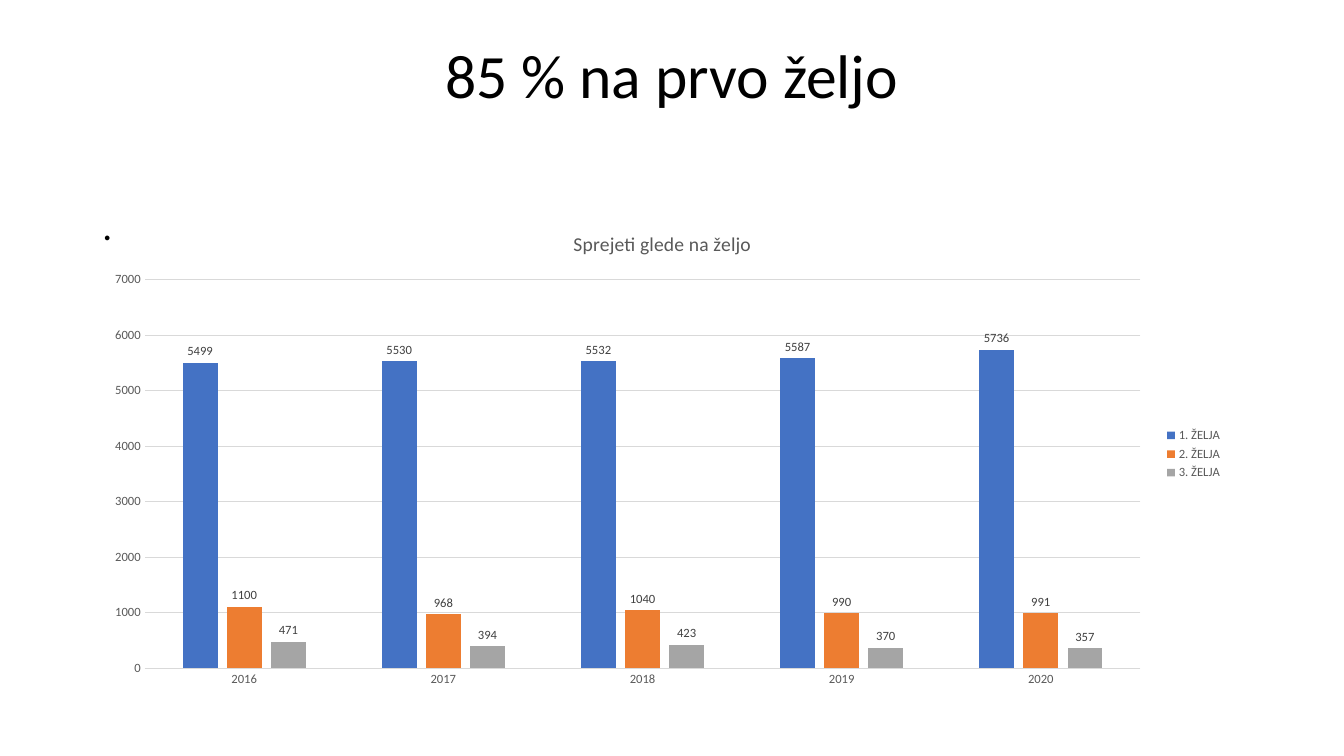
from pptx import Presentation
from pptx.chart.data import CategoryChartData
from pptx.dml.color import RGBColor
from pptx.enum import chart as ch, text
from pptx.util import Pt


def rgb(value):
    return RGBColor.from_string(value)


def style(font, size, color):
    font.name, font.size, font.bold = "Calibri", Pt(size), False
    font.color.rgb = rgb(color)


GREY, RULE = "595959", "D9D9D9"
YEARS = ["2016", "2017", "2018", "2019", "2020"]
CHOICES = [
    ("1. ŽELJA", "4472C4", [5499, 5530, 5532, 5587, 5736]),
    ("2. ŽELJA", "ED7D31", [1100, 968, 1040, 990, 991]),
    ("3. ŽELJA", "A5A5A5", [471, 394, 423, 370, 357]),
]

prs = Presentation()
prs.slide_width, prs.slide_height = Pt(960), Pt(540)
s = prs.slides.add_slide(prs.slide_layouts[5])

# Title and body text
title = s.shapes.title
title.left, title.top, title.width, title.height = Pt(66), Pt(28.75), Pt(828), Pt(104.4)
body = s.shapes.add_textbox(Pt(66), Pt(143.75), Pt(828), Pt(342.6))
for sp, words, size, align in [
    (title, "85 % na prvo željo", 44, text.PP_ALIGN.CENTER),
    (body, ".", 28, text.PP_ALIGN.LEFT),
]:
    tf = sp.text_frame
    tf.word_wrap = True
    tf.auto_size = text.MSO_AUTO_SIZE.NONE
    tf.vertical_anchor = text.MSO_ANCHOR.TOP
    p = tf.paragraphs[0]
    p.alignment, p.line_spacing = align, 0.9
    r = p.add_run()
    r.text = words
    style(r.font, size, "000000")

# Chart
data = CategoryChartData()
data.categories = YEARS
for name, _, values in CHOICES:
    data.add_series(name, values)
chart = s.shapes.add_chart(ch.XL_CHART_TYPE.COLUMN_CLUSTERED, Pt(66), Pt(151.2),
                           Pt(814.3), Pt(346.3), data).chart
style(chart.font, 10, "000000")

chart.has_title = True
r = chart.chart_title.text_frame.paragraphs[0].add_run()
r.text = "Sprejeti glede na željo"
style(r.font, 14, GREY)
chart.chart_title.include_in_layout = False

chart.has_legend = True
chart.legend.position = ch.XL_LEGEND_POSITION.RIGHT
chart.legend.include_in_layout = False
style(chart.legend.font, 9, GREY)

years, counts = chart.category_axis, chart.value_axis
for axis in (years, counts):
    axis.major_tick_mark = axis.minor_tick_mark = ch.XL_TICK_MARK.NONE
    style(axis.tick_labels.font, 9, GREY)
counts.minimum_scale, counts.maximum_scale, counts.major_unit = 0, 7000, 1000
counts.has_major_gridlines = True
counts.format.line.fill.background()
for line in (years.format.line, counts.major_gridlines.format.line):
    line.color.rgb, line.width = rgb(RULE), Pt(0.75)

plot = chart.plots[0]
plot.vary_by_categories = False
plot.gap_width, plot.overlap = 219, -27
for series, (_, color, _) in zip(plot.series, CHOICES):
    series.format.fill.solid()
    series.format.fill.fore_color.rgb = rgb(color)
    labels = series.data_labels
    labels.show_value = True
    labels.position = ch.XL_LABEL_POSITION.OUTSIDE_END
    style(labels.font, 9, "404040")

prs.save("out.pptx")
